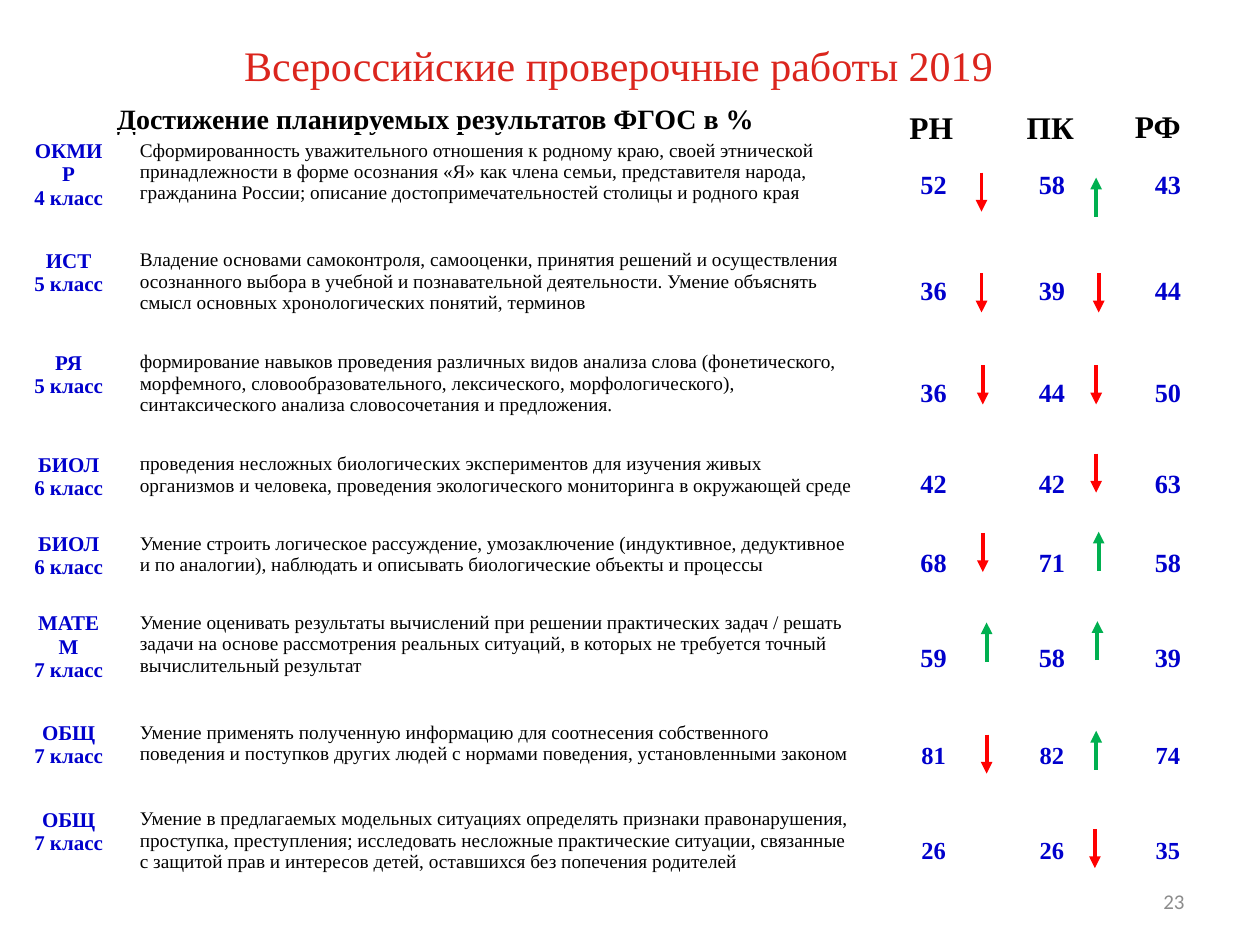
from lxml import etree
from pptx import Presentation
from pptx.dml.color import RGBColor
from pptx.enum.shapes import MSO_CONNECTOR
from pptx.enum.text import MSO_ANCHOR, PP_ALIGN
from pptx.oxml.ns import qn
from pptx.util import Inches, Pt

LEFT, CENTER, RIGHT = PP_ALIGN.LEFT, PP_ALIGN.CENTER, PP_ALIGN.RIGHT
TOP, MIDDLE = MSO_ANCHOR.TOP, MSO_ANCHOR.MIDDLE
STRAIGHT = MSO_CONNECTOR.STRAIGHT

TITLE_RED = RGBColor(0xDB, 0x25, 0x1D)
BLACK = RGBColor(0x00, 0x00, 0x00)
BLUE = RGBColor(0x00, 0x00, 0xCC)
GRAY = RGBColor(0x8C, 0x8C, 0x8C)
RED = RGBColor(0xFF, 0x00, 0x00)
GREEN = RGBColor(0x00, 0xB0, 0x50)

SERIF = "Times New Roman"
ARROW_LENGTH = 0.31
COLUMN_WIDTHS = [0.87, 5.96, 0.94, 0.94, 0.9]

# Row height, subject and class, skill, scores (РН, ПК, РФ), score size,
# then left and top of the arrows РН-ПК and ПК-РФ
RESULTS = [
    (0.87, "ОКМИР\v4 класс",
     "Сформированность уважительного отношения к родному краю, своей этнической "
     "принадлежности в форме осознания «Я» как члена семьи, представителя народа, "
     "гражданина России; описание достопримечательностей столицы и родного края",
     (52, 58, 43), 15, ((7.79, 1.37), (8.7, 1.41))),
    (0.81, "ИСТ\n5 класс",
     "Владение основами самоконтроля, самооценки, принятия решений и осуществления "
     "осознанного выбора в учебной и познавательной деятельности. Умение объяснять "
     "смысл основных хронологических понятий, терминов",
     (36, 39, 44), 15, ((7.79, 2.17), (8.72, 2.17))),
    (0.81, "РЯ\n5 класс",
     "формирование навыков проведения различных видов анализа слова (фонетического, "
     "морфемного, словообразовательного, лексического, морфологического), "
     "синтаксического анализа словосочетания и предложения.",
     (36, 44, 50), 15, ((7.8, 2.9), (8.7, 2.9))),
    (0.63, "БИОЛ\n6 класс",
     "проведения несложных биологических экспериментов для изучения живых "
     "организмов и человека, проведения экологического мониторинга в окружающей среде",
     (42, 42, 63), 15, (None, (8.7, 3.6))),
    (0.63, "БИОЛ\n6 класс",
     "Умение строить логическое рассуждение, умозаключение (индуктивное, дедуктивное "
     "и по аналогии), наблюдать и описывать биологические объекты и процессы",
     (68, 71, 58), 15, ((7.8, 4.23), (8.72, 4.22))),
    (0.87, "МАТЕМ\n7 класс",
     "Умение оценивать результаты вычислений при решении практических задач / решать "
     "задачи на основе рассмотрения реальных ситуаций, в которых не требуется точный "
     "вычислительный результат",
     (59, 58, 39), 15, ((7.83, 4.94), (8.71, 4.93))),
    (0.69, "ОБЩ\n7 класс",
     "Умение применять полученную информацию для соотнесения собственного "
     "поведения и поступков других людей с нормами поведения, установленными законом",
     (81, 82, 74), 14, ((7.83, 5.83), (8.7, 5.8))),
    (0.81, "ОБЩ\n7 класс",
     "Умение в предлагаемых модельных ситуациях определять признаки правонарушения, "
     "проступка, преступления; исследовать несложные практические ситуации, связанные "
     "с защитой прав и интересов детей, оставшихся без попечения родителей",
     (26, 26, 35), 14, (None, (8.69, 6.58))),
]


def write_text(frame, text, size, color, font=SERIF, bold=False, align=LEFT):
    """Fill a text frame, one paragraph for each line of text."""
    frame.word_wrap = True
    for index, line in enumerate(text.split("\n")):
        paragraph = frame.add_paragraph() if index else frame.paragraphs[0]
        paragraph.text = line
        paragraph.alignment = align
        for run in paragraph.runs:
            run.font.name = font
            run.font.size = Pt(size)
            run.font.bold = bold
            run.font.color.rgb = color


def add_title(slide, text):
    title = slide.shapes.title
    title.left, title.top = Inches(0.56), Inches(0.26)
    title.width, title.height = Inches(8.7), Inches(0.5)
    title.text_frame.vertical_anchor = MIDDLE
    write_text(title.text_frame, text, 24, TITLE_RED, align=CENTER)


def add_label(slide, text, left, top, width, height, anchor=TOP, **text_format):
    box = slide.shapes.add_textbox(Inches(left), Inches(top), Inches(width), Inches(height))
    box.text_frame.vertical_anchor = anchor
    write_text(box.text_frame, text, **text_format)


def fill_cell(cell, text, anchor=TOP, **text_format):
    cell.fill.background()
    cell.margin_left = cell.margin_right = Inches(0.13)
    cell.margin_top = cell.margin_bottom = Inches(0.07)
    cell.vertical_anchor = anchor
    write_text(cell.text_frame, text, **text_format)


def add_results_table(slide):
    table = slide.shapes.add_table(
        len(RESULTS), len(COLUMN_WIDTHS), Inches(0.11), Inches(1.04),
        Inches(sum(COLUMN_WIDTHS)), Inches(sum(result[0] for result in RESULTS))).table
    table.first_row = table.horz_banding = False
    for column, width in zip(table.columns, COLUMN_WIDTHS):
        column.width = Inches(width)
    for row, (height, subject, skill, scores, size, _) in zip(table.rows, RESULTS):
        row.height = Inches(height)
        subject_cell, skill_cell, *score_cells = row.cells
        fill_cell(subject_cell, subject, size=12, color=BLUE, bold=True, align=CENTER)
        fill_cell(skill_cell, skill, size=11, color=BLACK)
        for cell, score in zip(score_cells, scores):
            fill_cell(cell, str(score), anchor=MIDDLE, size=size, color=BLUE,
                      bold=True, align=CENTER)


def add_arrow(slide, left, top, upward):
    start, end = top, top + ARROW_LENGTH
    if upward:
        start, end = end, start
    arrow = slide.shapes.add_connector(
        STRAIGHT, Inches(left), Inches(start), Inches(left), Inches(end))
    arrow.line.color.rgb = GREEN if upward else RED
    arrow.line.width = Pt(2.25)
    etree.SubElement(arrow.line._get_or_add_ln(), qn("a:tailEnd"), type="triangle")
    etree.SubElement(arrow._element.spPr, qn("a:effectLst"))


def add_comparison_arrows(slide):
    """Point up where a score beats the one to its right, down where it is lower."""
    for *_, scores, _, places in RESULTS:
        for score, reference, place in zip(scores, scores[1:], places):
            if place:
                add_arrow(slide, *place, upward=score > reference)


def main():
    presentation = Presentation()
    presentation.slide_width, presentation.slide_height = Inches(10), Inches(7.5)
    slide = presentation.slides.add_slide(presentation.slide_layouts[5])

    add_title(slide, "Всероссийские проверочные работы 2019")
    add_label(slide, "Достижение планируемых результатов ФГОС в %",
              0.83, 0.76, 6.14, 0.37, size=16, color=BLACK, bold=True)
    add_results_table(slide)
    for text, left, top in (("РН", 7.12, 0.81), ("ПК", 8.05, 0.81), ("РФ", 8.91, 0.8)):
        add_label(slide, text, left, top, 0.63, 0.4, size=18, color=BLACK, bold=True)
    add_comparison_arrows(slide)
    add_label(slide, "23", 7.17, 6.95, 2.33, 0.4, anchor=MIDDLE,
              size=12, color=GRAY, font="Calibri", align=RIGHT)

    presentation.save("out.pptx")


if __name__ == "__main__":
    main()
